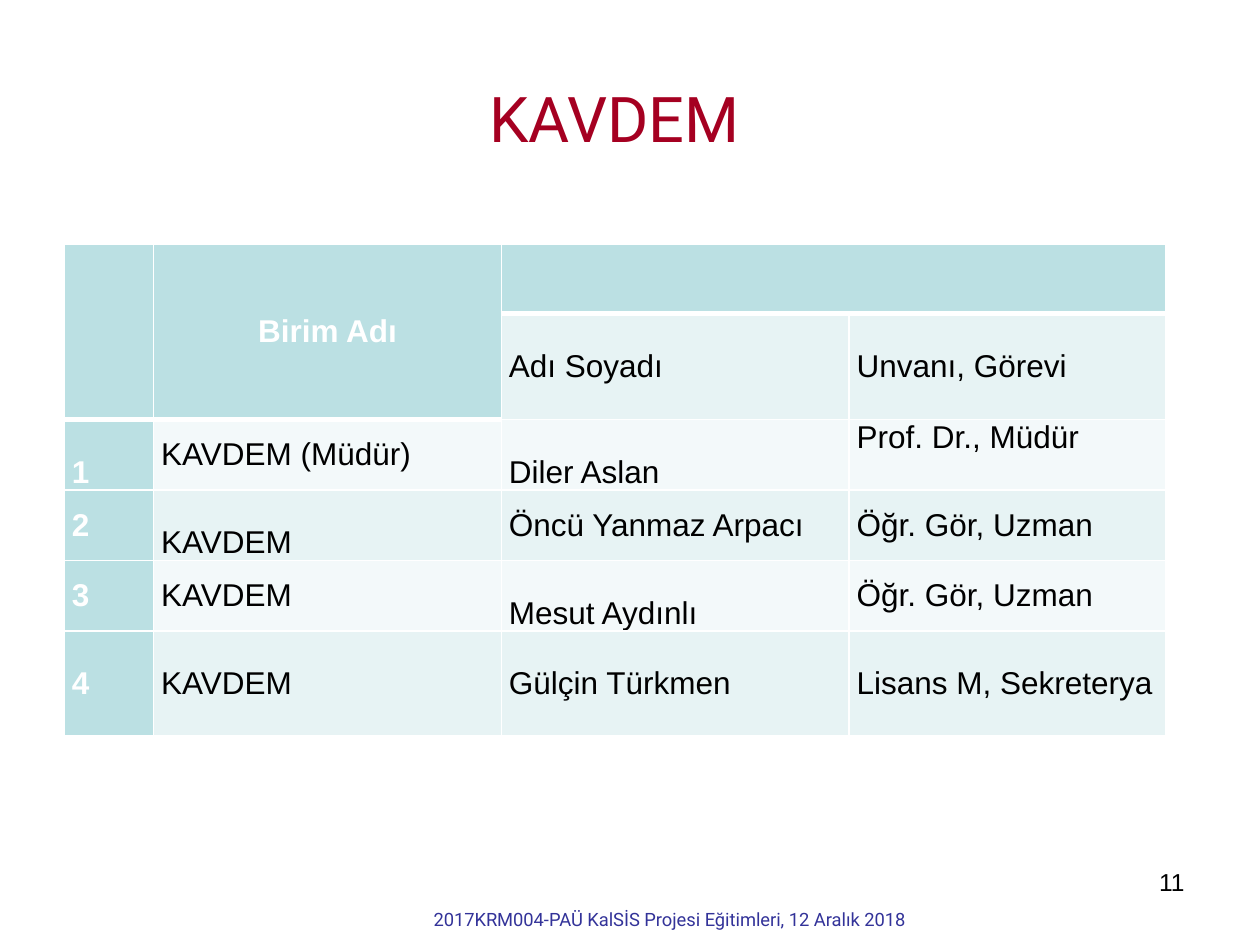
from lxml import etree
from pptx import Presentation
from pptx import util as u
from pptx.dml.color import RGBColor
from pptx.enum import text
from pptx.oxml import ns

WHITE = RGBColor(0xFF, 0xFF, 0xFF)
BLACK = RGBColor(0, 0, 0)
RED = RGBColor(0xA5, 0x00, 0x21)
NAVY = RGBColor(0x33, 0x33, 0x99)
TEAL = RGBColor(0xBB, 0xE0, 0xE3)
BANDS = RGBColor(0xF3, 0xF9, 0xFA), RGBColor(0xE7, 0xF3, 0xF4)

ALIGN = text.PP_ALIGN
TOP, MID, LOW = (text.MSO_ANCHOR.TOP, text.MSO_ANCHOR.MIDDLE,
                 text.MSO_ANCHOR.BOTTOM)

COLS = 0.71, 2.76, 2.76, 2.51
ROWS = 0.55, 0.84, 0.56, 0.56, 0.56, 0.83
STAFF = [
    ["", "Birim Adı", "", ""],
    ["", "", "Adı Soyadı", "Unvanı, Görevi"],
    ["1", "KAVDEM (Müdür)", "Diler Aslan", "Prof. Dr., Müdür"],
    ["2", "KAVDEM", "Öncü Yanmaz Arpacı", "Öğr. Gör, Uzman"],
    ["3", "KAVDEM", "Mesut Aydınlı", "Öğr. Gör, Uzman"],
    ["4", "KAVDEM", "Gülçin Türkmen", "Lisans M, Sekreterya"],
]
MERGES = [(0, 0, 1, 0), (0, 1, 1, 1), (0, 2, 0, 3)]
ANCHORS = {(2, 0): LOW, (2, 2): LOW, (2, 3): TOP, (3, 1): LOW, (4, 2): LOW}


def apply(item, **vals):
    for key, val in vals.items():
        setattr(item, key, val)


def edge(cell, side, width):
    """Draw a white border on one side (L, R, T or B)."""
    line = etree.SubElement(cell._tc.get_or_add_tcPr(), ns.qn("a:ln" + side),
                            w=str(u.Pt(width)))
    fill = etree.SubElement(line, ns.qn("a:solidFill"))
    etree.SubElement(fill, ns.qn("a:srgbClr"), val=str(WHITE))


class Page:
    def __init__(self, slide):
        self.slide = slide
        self.face = "Arial"

    def put(self, frame, words, size, color, face=None, bold=False, **para):
        line = frame.paragraphs[0]
        apply(line, **para)
        run = line.add_run()
        run.text = words
        apply(run.font, size=u.Pt(size), name=face or self.face, bold=bold)
        run.font.color.rgb = color

    def label(self, box, words, size, color, anchor=TOP, **style):
        frame = self.slide.shapes.add_textbox(*map(u.Inches, box)).text_frame
        apply(frame, word_wrap=True, vertical_anchor=anchor)
        self.put(frame, words, size, color, **style)

    def cell(self, cell, row, col, words):
        head = col == 0 or row == 0 or (row == 1 and col == 1)
        # The header ends one row lower in the two left columns.
        last = 1 if col < 2 else 0
        edge(cell, "L", 1)
        edge(cell, "R", 1)
        edge(cell, "T", 3 if row == last + 1 else 1)
        edge(cell, "B", 3 if row == last or (head and row < 2) else 1)
        cell.fill.solid()
        cell.fill.fore_color.rgb = TEAL if head else BANDS[row % 2]
        apply(cell, margin_left=u.Inches(0.06), margin_right=u.Inches(0.06),
              margin_top=0, margin_bottom=0,
              vertical_anchor=ANCHORS.get((row, col), MID))
        if words:
            self.put(cell.text_frame, words, 18, WHITE if head else BLACK,
                     bold=head,
                     alignment=ALIGN.CENTER if row == 0 else ALIGN.LEFT)

    def table(self, left, top):
        box = map(u.Inches, (left, top, sum(COLS), sum(ROWS)))
        grid = self.slide.shapes.add_table(len(ROWS), len(COLS), *box).table
        apply(grid, first_row=False, horz_banding=False)
        for col, width in zip(grid.columns, COLS):
            col.width = u.Inches(width)
        for row, height in zip(grid.rows, ROWS):
            row.height = u.Inches(height)
        for r, names in enumerate(STAFF):
            for c, words in enumerate(names):
                self.cell(grid.cell(r, c), r, c, words)
        for r, c, r2, c2 in MERGES:
            grid.cell(r, c).merge(grid.cell(r2, c2))


def main():
    deck = Presentation()
    apply(deck, slide_width=u.Inches(10), slide_height=u.Inches(7.5))
    page = Page(deck.slides.add_slide(deck.slide_layouts[6]))
    page.label((7.17, 6.83, 2.33, 0.52), "11", 14, BLACK,
               alignment=ALIGN.RIGHT)
    page.label((0.17, 0.4, 9.41, 0.94), "KAVDEM", 36, RED, MID, face="Roboto",
               alignment=ALIGN.CENTER, line_spacing=1.2,
               space_before=u.Pt(12), space_after=u.Pt(18))
    page.label((2.87, 7.16, 4.89, 0.23),
               "2017KRM004-PAÜ KalSİS Projesi Eğitimleri, 12 Aralık 2018",
               10.5, NAVY, face="Roboto", alignment=ALIGN.CENTER)
    page.table(0.51, 1.94)
    deck.save("out.pptx")


if __name__ == "__main__":
    main()
